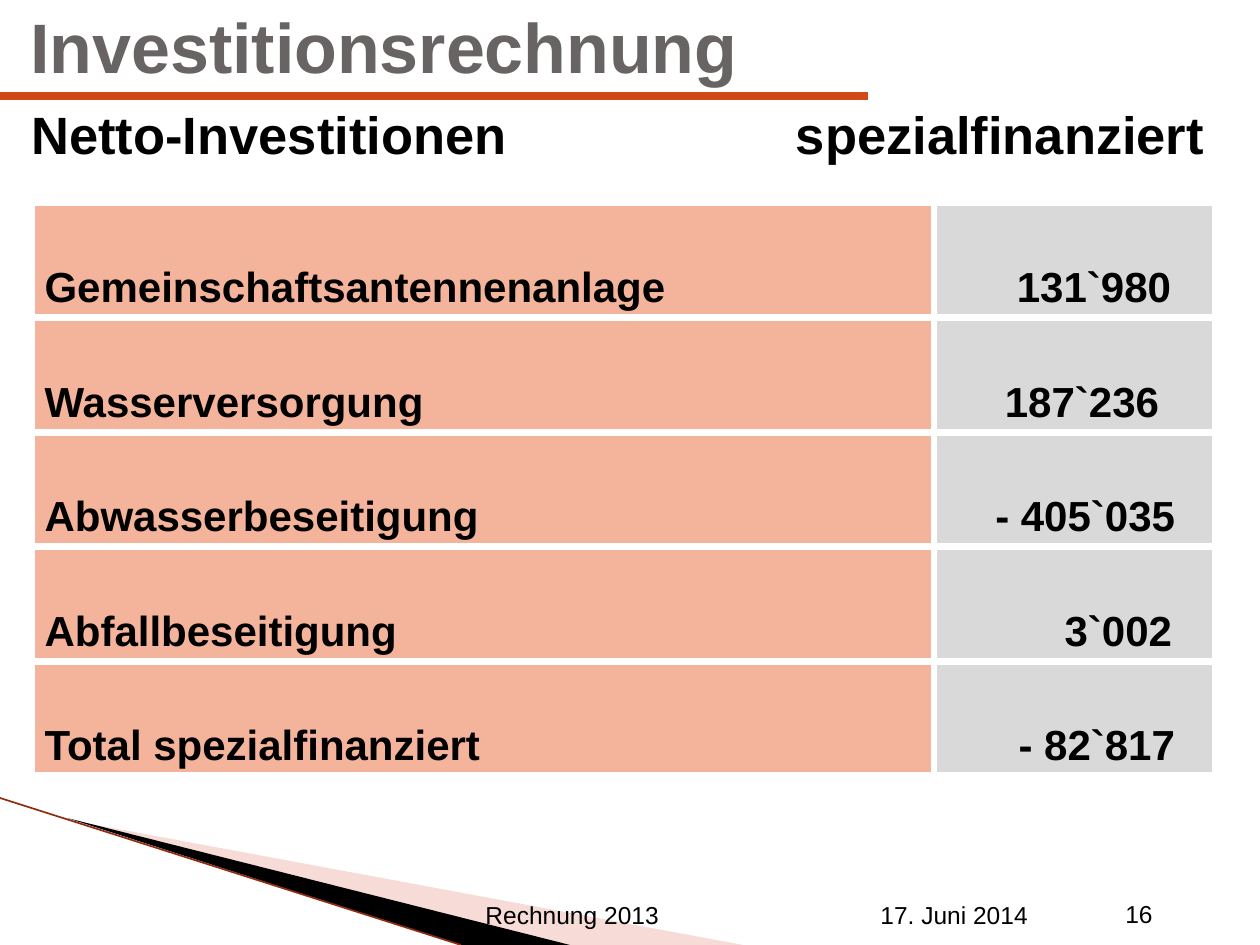
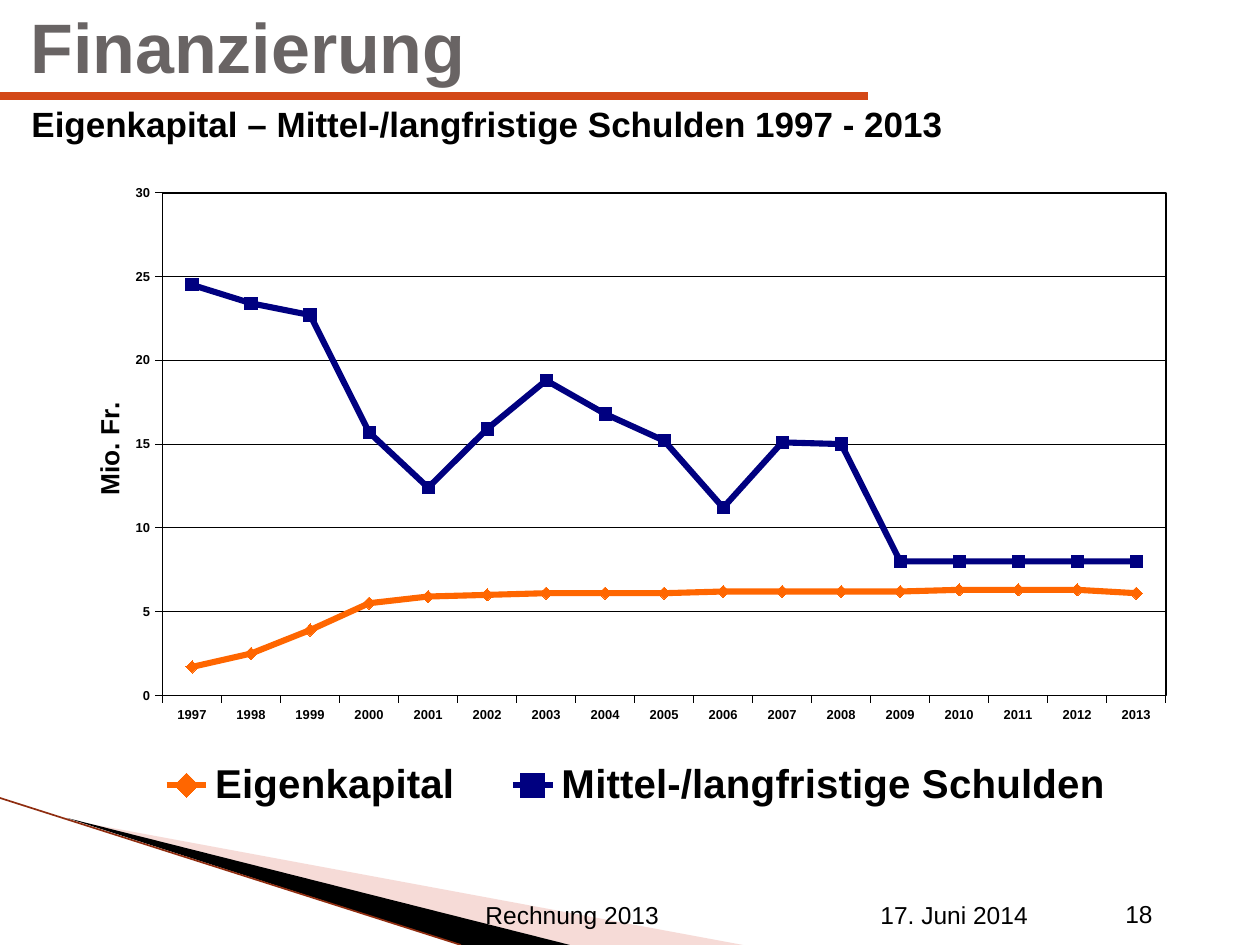
import pptx
import pptx.chart.data
import pptx.dml.color
import pptx.enum.chart
import pptx.enum.shapes
import pptx.enum.text
import pptx.oxml
import pptx.oxml.ns
import pptx.util
from lxml import etree

RGBColor = pptx.dml.color.RGBColor
BLACK = RGBColor(0x00, 0x00, 0x00)
WHITE = RGBColor(0xFF, 0xFF, 0xFF)
TITLE_GREY = RGBColor(0x69, 0x64, 0x64)
RULE_RED = RGBColor(0xD3, 0x48, 0x17)
EDGE_BROWN = RGBColor(0x8F, 0x2D, 0x10)
WEDGE_PINK = RGBColor(0xE9, 0xA5, 0x9D)
LABEL_FILL = RGBColor(0xF4, 0xB3, 0x9B)
AMOUNT_FILL = RGBColor(0xD9, 0xD9, 0xD9)
EQUITY_ORANGE = RGBColor(0xFF, 0x66, 0x00)
DEBT_NAVY = RGBColor(0x00, 0x00, 0x80)

FONT = "Arial"
SLIDE_WIDTH, SLIDE_HEIGHT = 1260, 945
EMU_PER_PX = 914400 / 126

# Label, amount, gap in px between the amount and the right cell edge
INVESTMENTS = [
    ("Gemeinschaftsantennenanlage", "131`980", 44),
    ("Wasserversorgung", "187`236", 56),
    ("Abwasserbeseitigung", "- 405`035", 40),
    ("Abfallbeseitigung", "3`002", 43),
    ("Total spezialfinanziert", "- 82`817", 40),
]
YEARS = [str(year) for year in range(1997, 2014)]
EQUITY = [1.7, 2.5, 3.9, 5.5, 5.9, 6, 6.1, 6.1, 6.1, 6.2, 6.2, 6.2, 6.2,
          6.3, 6.3, 6.3, 6.1]
DEBT = [24.5, 23.4, 22.7, 15.7, 12.4, 15.9, 18.8, 16.8, 15.2, 11.2, 15.1, 15,
        8, 8, 8, 8, 8]


def px(length):
    return pptx.util.Emu(round(length * EMU_PER_PX))


def set_font(font, size, color=BLACK, bold=True):
    font.name = FONT
    font.size = pptx.util.Pt(size)
    font.bold = bold
    font.color.rgb = color


def set_line(line, color, width):
    line.color.rgb = color
    line.width = pptx.util.Pt(width)


def add_text(slide, text, box, size, color=BLACK, bold=True, right_tab=None):
    shape = slide.shapes.add_textbox(*map(px, box))
    frame = shape.text_frame
    frame.word_wrap = True
    frame.text = text
    paragraph = frame.paragraphs[0]
    if right_tab:
        properties = paragraph._p.get_or_add_pPr()
        tabs = etree.SubElement(properties, pptx.oxml.ns.qn("a:tabLst"))
        etree.SubElement(tabs, pptx.oxml.ns.qn("a:tab"),
                         pos=str(px(right_tab)), algn="r")
    for run in paragraph.runs:
        set_font(run.font, size, color, bold)
    return shape


def add_line(slide, start, end, color, width):
    connector = slide.shapes.add_connector(
        pptx.enum.shapes.MSO_CONNECTOR.STRAIGHT, *map(px, start + end))
    set_line(connector.line, color, width)
    etree.SubElement(connector._element.spPr, pptx.oxml.ns.qn("a:effectLst"))


def add_wedge(slide, points, color, opacity=100):
    builder = slide.shapes.build_freeform(*points[0], scale=EMU_PER_PX)
    builder.add_line_segments(points[1:], close=True)
    shape = builder.convert_to_shape()
    shape.shadow.inherit = False
    shape.line.fill.background()
    shape.fill.solid()
    shape.fill.fore_color.rgb = color
    if opacity < 100:
        color_element = shape._element.spPr.find(".//" + pptx.oxml.ns.qn("a:srgbClr"))
        etree.SubElement(color_element, pptx.oxml.ns.qn("a:alpha"),
                         val=str(opacity * 1000))


def add_corner(slide, top):
    bottom = SLIDE_HEIGHT
    add_wedge(slide, [(69, top + 22), (743, bottom), (570, bottom)], WEDGE_PINK, 40)
    add_wedge(slide, [(67, top + 20), (570, bottom), (461, bottom)], BLACK)
    add_line(slide, (0, top), (461, bottom), EDGE_BROWN, 0.95)


def add_footer(slide, number, top):
    for text, left, offset, width in [
        ("Rechnung 2013", 473, 1, 396),
        ("17. Juni 2014", 868, 1, 244),
        (str(number), 1113, 0, 88),
    ]:
        add_text(slide, text, (left, top + offset, width, 50), 14, bold=False)


def add_heading(slide, title, subtitle, subtitle_size):
    heading = add_text(slide, title, (18, -8, 769, 106), 40, TITLE_GREY)
    heading.text_frame.vertical_anchor = pptx.enum.text.MSO_ANCHOR.MIDDLE
    add_text(slide, subtitle, (19, 96, 1206, 79), subtitle_size, right_tab=1173)
    add_line(slide, (0, 96), (868, 96), RULE_RED, 5)


def add_framed_slide(presentation, number, title, subtitle, subtitle_size):
    """Add a slide with the shared corner, heading and footer."""
    slide = presentation.slides.add_slide(presentation.slide_layouts[6])
    add_corner(slide, 798)
    add_heading(slide, title, subtitle, subtitle_size)
    add_footer(slide, number, 893)
    return slide


def add_cell_borders(cell, color, width):
    properties = cell._tc.get_or_add_tcPr()
    for side in ("lnL", "lnR", "lnT", "lnB"):
        border = etree.SubElement(properties, pptx.oxml.ns.qn("a:" + side),
                                  w=str(pptx.util.Pt(width)))
        fill = etree.SubElement(border, pptx.oxml.ns.qn("a:solidFill"))
        etree.SubElement(fill, pptx.oxml.ns.qn("a:srgbClr"), val=str(color))


def fill_cell(cell, text, color):
    add_cell_borders(cell, WHITE, 4.5)
    cell.fill.solid()
    cell.fill.fore_color.rgb = color
    cell.vertical_anchor = pptx.enum.text.MSO_ANCHOR.BOTTOM
    cell.text_frame.text = text
    set_font(cell.text_frame.paragraphs[0].runs[0].font, 24)


def add_investment_table(slide, left, top, width, height):
    frame = slide.shapes.add_table(
        len(INVESTMENTS), 2, *map(px, (left, top, width, height)))
    table = frame.table
    table.first_row = False
    table.horz_banding = False
    amount_width = 281
    table.columns[0].width = px(width - amount_width)
    table.columns[1].width = px(amount_width)
    for row, (label, amount, right_gap) in enumerate(INVESTMENTS):
        table.rows[row].height = px(height / len(INVESTMENTS))
        label_cell, amount_cell = table.cell(row, 0), table.cell(row, 1)
        fill_cell(label_cell, label, LABEL_FILL)
        fill_cell(amount_cell, amount, AMOUNT_FILL)
        amount_cell.margin_right = px(right_gap)
        amount_cell.text_frame.paragraphs[0].alignment = pptx.enum.text.PP_ALIGN.RIGHT


def layout_element(x, y, width=None, height=None, inner=False):
    """Return a manual chart layout, in fractions of the chart's box."""
    values = [("layoutTarget", "inner")] if inner else []
    values += [("xMode", "edge"), ("yMode", "edge"), ("x", x), ("y", y)]
    if width:
        values += [("w", width), ("h", height)]
    layout = pptx.oxml.parse_xml(
        f'<c:layout {pptx.oxml.ns.nsdecls("c")}><c:manualLayout/></c:layout>')
    for name, value in values:
        etree.SubElement(layout[0], pptx.oxml.ns.qn("c:" + name), val=str(value))
    return layout


def replace_layout(parent, layout, position):
    for existing in parent.findall(pptx.oxml.ns.qn("c:layout")):
        parent.remove(existing)
    parent.insert(position, layout)


def style_axis(axis):
    axis.major_tick_mark = pptx.enum.chart.XL_TICK_MARK.OUTSIDE
    axis.minor_tick_mark = pptx.enum.chart.XL_TICK_MARK.NONE
    set_font(axis.tick_labels.font, 7.4)
    set_line(axis.format.line, BLACK, 0.37)


def style_value_axis(axis):
    style_axis(axis)
    axis.minimum_scale, axis.maximum_scale, axis.major_unit = 0, 30, 5
    axis.tick_labels.number_format = "0"
    axis.tick_labels.number_format_is_linked = False
    set_line(axis.major_gridlines.format.line, BLACK, 0.37)
    title = axis.axis_title
    title.text_frame.text = "Mio. Fr."
    set_font(title.text_frame.paragraphs[0].runs[0].font, 15)
    title.text_frame._txBody.bodyPr.set("rot", "-5400000")
    title.text_frame._txBody.bodyPr.set("vert", "horz")
    replace_layout(title._element, layout_element(0.03, 0.36), 1)


def style_series(series, color, marker_style):
    series.smooth = False
    set_line(series.format.line, color, 3.5)
    series.marker.style = marker_style
    series.marker.size = 7
    series.marker.format.fill.solid()
    series.marker.format.fill.fore_color.rgb = color
    set_line(series.marker.format.line, color, 0.75)


def style_plot_area(chart):
    plot_area = chart._chartSpace.chart.plotArea
    replace_layout(plot_area, layout_element(0.096, 0.056, 0.887, 0.746, True), 0)
    plot_area.append(pptx.oxml.parse_xml(
        f'<c:spPr {pptx.oxml.ns.nsdecls("c", "a")}><a:noFill/>'
        f'<a:ln w="{pptx.util.Pt(1)}"><a:solidFill><a:srgbClr val="{BLACK}"/>'
        '</a:solidFill></a:ln></c:spPr>'))


def add_financing_chart(slide, left, top, width, height):
    data = pptx.chart.data.CategoryChartData(number_format="0.0")
    data.categories = YEARS
    data.add_series("Eigenkapital", EQUITY)
    data.add_series("Mittel-/langfristige Schulden", DEBT)
    chart = slide.shapes.add_chart(
        pptx.enum.chart.XL_CHART_TYPE.LINE_MARKERS,
        *map(px, (left, top, width, height)), data).chart
    chart.has_title = False
    set_font(chart.font, 7.4)
    style_axis(chart.category_axis)
    style_value_axis(chart.value_axis)
    plot = chart.plots[0]
    plot.vary_by_categories = False
    markers = pptx.enum.chart.XL_MARKER_STYLE
    style_series(plot.series[0], EQUITY_ORANGE, markers.DIAMOND)
    style_series(plot.series[1], DEBT_NAVY, markers.SQUARE)
    style_plot_area(chart)
    chart.has_legend = True
    chart.legend.position = pptx.enum.chart.XL_LEGEND_POSITION.BOTTOM
    chart.legend.include_in_layout = False
    set_font(chart.legend.font, 23)
    replace_layout(chart.legend._element, layout_element(0.06, 0.89, 0.91, 0.09), 1)


def main():
    presentation = pptx.Presentation()
    presentation.slide_width = px(SLIDE_WIDTH)
    presentation.slide_height = px(SLIDE_HEIGHT)

    investments = add_framed_slide(presentation, 16, "Investitionsrechnung",
                                   "Netto-Investitionen\tspezialfinanziert", 30)
    add_investment_table(investments, 32, 203, 1183, 573)

    financing = add_framed_slide(
        presentation, 18, "Finanzierung",
        "Eigenkapital – Mittel-/langfristige Schulden 1997 - 2013", 20)
    add_financing_chart(financing, 54, 155, 1131, 674)

    presentation.save("out.pptx")


if __name__ == "__main__":
    main()
